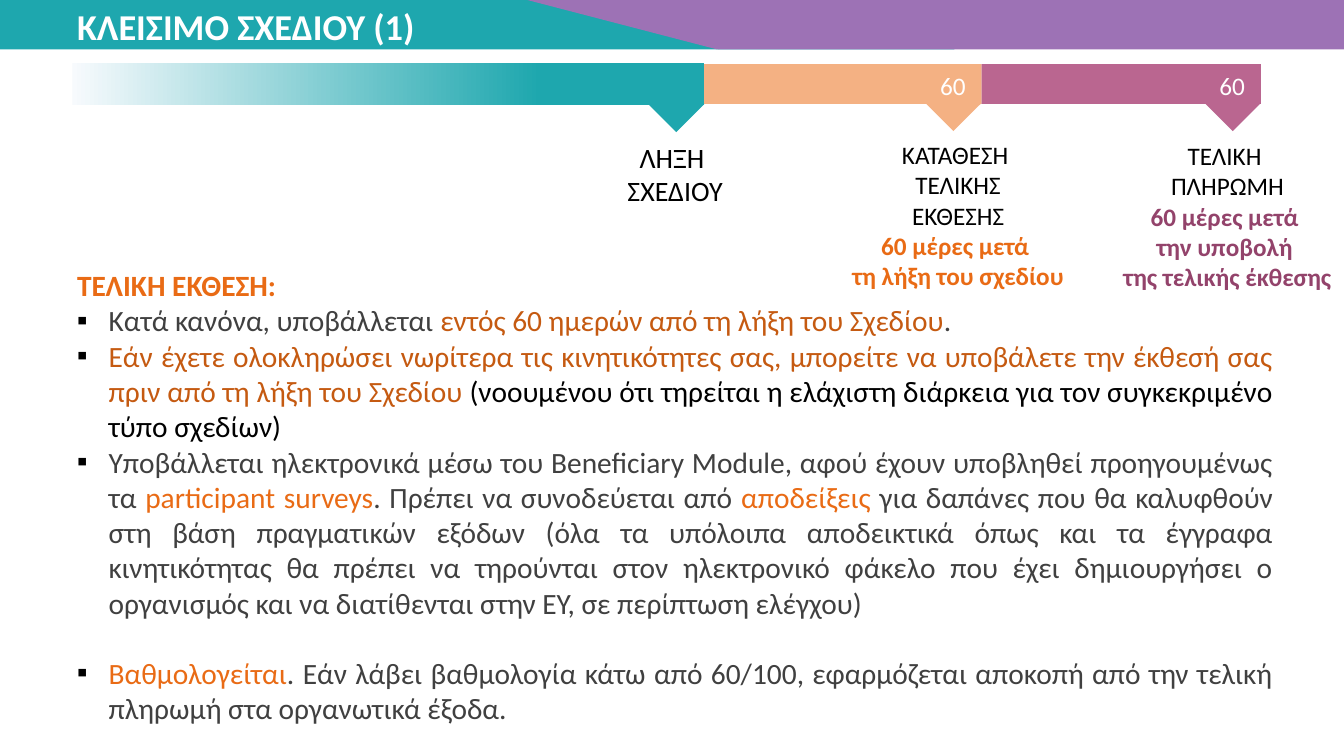
from lxml import etree
from pptx import Presentation, util as u
from pptx.dml.color import RGBColor
from pptx.enum import shapes, text
from pptx.oxml import ns

PX = 9525
WHITE = RGBColor(0xFF, 0xFF, 0xFF)
BLACK = RGBColor(0, 0, 0)
GREY = RGBColor(0x40, 0x40, 0x40)
TEAL = RGBColor(0x1E, 0xA7, 0xAE)
PALE = RGBColor(0xF7, 0xFA, 0xFD)
PURPLE = RGBColor(0x9D, 0x72, 0xB5)
PEACH = RGBColor(0xF4, 0xB1, 0x83)
ROSE = RGBColor(0xBA, 0x66, 0x90)
PLUM = RGBColor(0x93, 0x43, 0x6B)
ORANGE = RGBColor(0xE9, 0x6B, 0x15)
RUST = RGBColor(0xC5, 0x5A, 0x11)

RECT = shapes.MSO_SHAPE.RECTANGLE
WEDGE = shapes.MSO_SHAPE.ISOSCELES_TRIANGLE
LEFT, CENTER, JUST = (text.PP_ALIGN.LEFT, text.PP_ALIGN.CENTER,
                      text.PP_ALIGN.JUSTIFY)


class Board:
    font = "Calibri"

    def __init__(self, deck):
        self.slide = deck.slides.add_slide(deck.slide_layouts[6])

    def shape(self, kind, box, color, turn=0, tip=None, fade=None):
        """Fill with color, or run from fade to color along the width."""
        item = self.slide.shapes.add_shape(kind, *[n * PX for n in box])
        item.shadow.inherit = False
        item.line.fill.background()
        item.rotation = turn
        if tip is not None:
            item.adjustments[0] = tip
        if fade is None:
            item.fill.solid()
            item.fill.fore_color.rgb = color
        else:
            item.fill.gradient()
            item.fill.gradient_angle = 0
            first, last = item.fill.gradient_stops
            first.color.rgb, first.position = fade, 0
            last.color.rgb, last.position = color, 0.74

    def text(self, box, paras, size, align=LEFT, wrap=False):
        """Each paragraph is a list of (words, color, bold) runs."""
        item = self.slide.shapes.add_textbox(*[n * PX for n in box])
        frame = item.text_frame
        frame.word_wrap = wrap
        frame.auto_size = text.MSO_AUTO_SIZE.SHAPE_TO_FIT_TEXT
        for i, runs in enumerate(paras):
            para = frame.add_paragraph() if i else frame.paragraphs[0]
            para.alignment = align
            for words, color, bold in runs:
                run = para.add_run()
                run.text = words
                run.font.name = self.font
                run.font.size = u.Pt(size)
                run.font.bold = bold
                run.font.color.rgb = color
        return frame.paragraphs

    def bullet(self, para, mark="▪", indent=30):
        props = para._p.get_or_add_pPr()
        props.set("marL", str(indent * PX))
        props.set("indent", str(-indent * PX))
        tint = etree.SubElement(props, ns.qn("a:buClr"))
        etree.SubElement(tint, ns.qn("a:srgbClr"), val=str(BLACK))
        etree.SubElement(props, ns.qn("a:buFont"), typeface=self.font)
        etree.SubElement(props, ns.qn("a:buChar"), char=mark)

    def stage(self, left, top, width, height, color, fade=None):
        """Draw a timeline bar with a pointer below its right end."""
        self.shape(RECT, (left, top, width, height), color, fade=fade)
        self.shape(WEDGE, (left + width - 46, top + height - 20, 38, 38),
                   color, turn=45, tip=1)

    def label(self, box, size, plain, strong=(), color=BLACK):
        paras = [[(line, BLACK, False)] for line in plain]
        paras += [[(line, color, True)] for line in strong]
        self.text(box, paras, size, CENTER)


def plain(*runs):
    return [(words, color, False) for words, color in runs]


REPORT = [
    [("ΤΕΛΙΚΗ ΕΚΘΕΣΗ:", ORANGE, True)],
    plain(("Κατά κανόνα, υποβάλλεται ", GREY),
          ("εντός 60 ημερών από τη λήξη του Σχεδίου", RUST), (".", GREY)),
    plain(("Εάν έχετε ολοκληρώσει νωρίτερα τις κινητικότητες σας, μπορείτε να "
           "υποβάλετε την έκθεσή σας πριν από τη λήξη του Σχεδίου ", RUST),
          ("(νοουμένου ότι τηρείται η ελάχιστη διάρκεια για τον συγκεκριμένο "
           "τύπο σχεδίων)", BLACK)),
    plain(("Υποβάλλεται ηλεκτρονικά μέσω του Beneficiary Module, αφού έχουν "
           "υποβληθεί προηγουμένως τα ", GREY),
          ("participant surveys", ORANGE),
          (". Πρέπει να συνοδεύεται από ", GREY),
          ("αποδείξεις ", ORANGE),
          ("για δαπάνες που θα καλυφθούν στη βάση πραγματικών εξόδων (όλα τα "
           "υπόλοιπα αποδεικτικά όπως και τα έγγραφα κινητικότητας θα πρέπει "
           "να τηρούνται στον ηλεκτρονικό φάκελο που έχει δημιουργήσει ο "
           "οργανισμός και να διατίθενται στην ΕΥ, σε περίπτωση ελέγχου)",
           GREY)),
    plain(("Βαθμολογείται", ORANGE),
          (". Εάν λάβει βαθμολογία κάτω από 60/100, εφαρμόζεται αποκοπή από "
           "την τελική πληρωμή στα οργανωτικά έξοδα.", GREY)),
]


def main():
    deck = Presentation()
    deck.slide_width, deck.slide_height = 1280 * PX, 720 * PX
    board = Board(deck)

    board.shape(RECT, (0, -4, 909, 51), TEAL)
    board.shape(RECT, (684, -4, 596, 51), PURPLE)
    board.shape(WEDGE, (487, -4, 384, 51), PURPLE, turn=180, tip=0.49)
    board.text((64, -1, 344, 52), [[("ΚΛΕΙΣΙΜΟ ΣΧΕΔΙΟΥ (1)", WHITE, True)]], 26)

    paras = board.text((64, 233, 1158, 468), REPORT, 21, JUST, wrap=True)
    paras[0].line_spacing = 1.5
    for para in paras[1:]:
        board.bullet(para)
    paras[-1].space_before = u.Pt(25)

    board.stage(669, 61, 266, 38, PEACH)
    board.stage(69, 60, 602, 40, TEAL, fade=PALE)
    board.stage(935, 61, 266, 38, ROSE)
    for right in (935, 1201):
        board.text((right - 49, 62, 44, 38), [[("60", WHITE, False)]], 18)

    board.label((588, 129, 110, 74), 20, ["ΛΗΞΗ ", "ΣΧΕΔΙΟΥ"])
    board.label((801, 128, 223, 156), 18, ["ΚΑΤΑΘΕΣΗ ", "ΤΕΛΙΚΗΣ", "ΕΚΘΕΣΗΣ"],
                ["60 μέρες μετά ", "τη λήξη του σχεδίου"], ORANGE)
    board.label((1059, 129, 220, 156), 18, ["ΤΕΛΙΚΗ ", "ΠΛΗΡΩΜΗ"],
                ["60 μέρες μετά ", "την υποβολή ", "της τελικής έκθεσης"], PLUM)

    deck.save("out.pptx")


if __name__ == "__main__":
    main()
